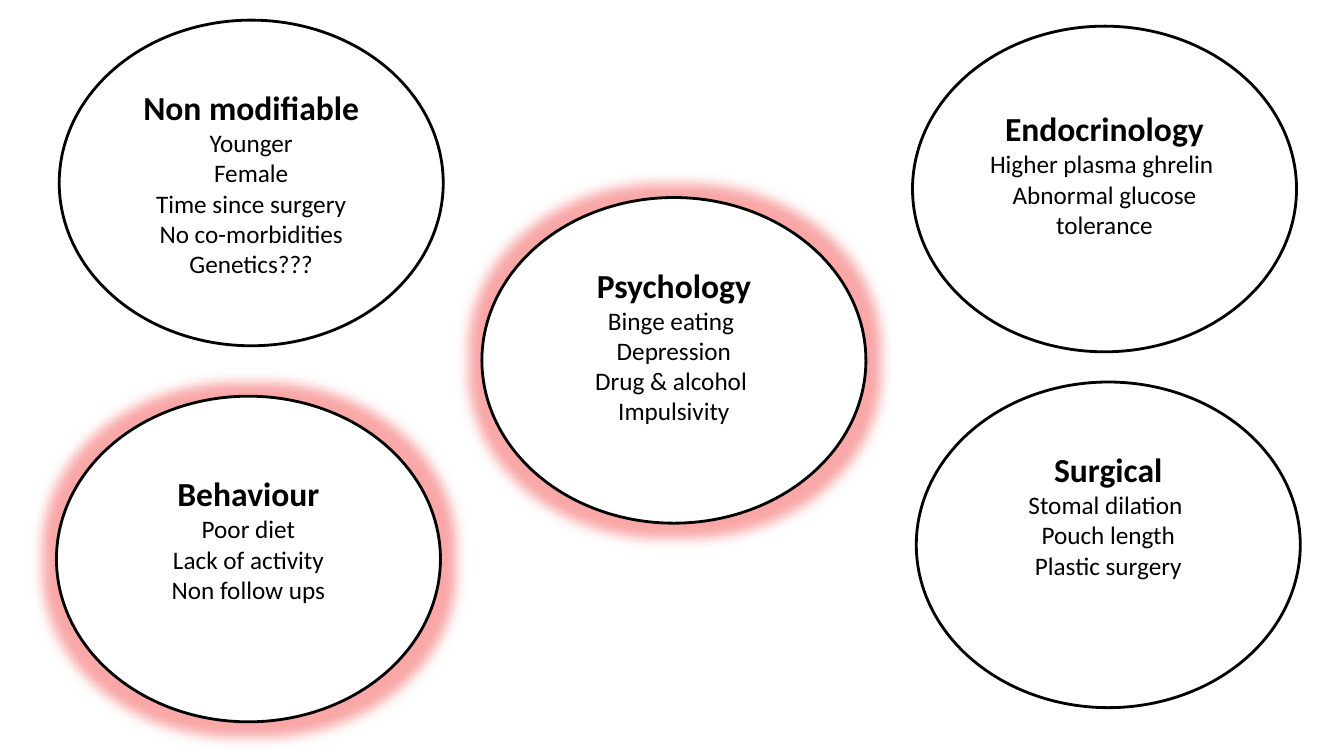
from dataclasses import dataclass

from lxml.etree import SubElement
from pptx import Presentation
from pptx.dml.color import RGBColor
from pptx.enum.shapes import MSO_SHAPE
from pptx.enum.text import MSO_ANCHOR, PP_ALIGN
from pptx.oxml.ns import qn
from pptx.shapes.autoshape import Shape
from pptx.slide import Slide
from pptx.text.text import TextFrame
from pptx.util import Pt

BLACK = RGBColor(0, 0, 0)
WHITE = RGBColor(255, 255, 255)
RED = RGBColor(0xF0, 0x24, 0x24)

FONT = "Calibri"
WIDTH, HEIGHT = 274.3, 232.6
HEAD, BODY = 24, 18
PAD = 3.6
LEAD = 1.2  # line height relative to font size


@dataclass
class Factor:
    left: float
    top: float
    head: str
    items: list[str]
    lift: float = 0  # free height below the text
    glow: bool = False


FACTORS = [
    Factor(40.3, 283, "Behaviour",
           ["Poor diet", " Lack of activity ", "Non follow ups"],
           lift=HEAD * LEAD, glow=True),
    Factor(651.8, 18.7, "Endocrinology",
           ["Higher plasma ghrelin  Abnormal glucose tolerance"],
           lift=BODY * LEAD),
    Factor(42.3, 14.4, "Non modifiable",
           ["Younger", "Female", "Time since surgery",
            "No co-morbidities", "Genetics???"]),
    Factor(654.5, 272.9, "Surgical",
           ["Stomal dilation ", "Pouch length", "Plastic surgery"],
           lift=2 * BODY * LEAD),
    Factor(344.2, 141.1, "Psychology",
           ["Binge eating ", " Depression ", "Drug & alcohol ", "Impulsivity"],
           lift=BODY * LEAD, glow=True),
]


def add_text(frame: TextFrame, text: str, *, size: float = BODY,
             bold: bool = False, first: bool = False) -> None:
    para = frame.paragraphs[0] if first else frame.add_paragraph()
    para.alignment = PP_ALIGN.CENTER
    run = para.add_run()
    run.text = text
    font = run.font
    font.name, font.size, font.bold = FONT, Pt(size), bold
    font.color.rgb = BLACK


def add_glow(shape: Shape, color: RGBColor, size: float, alpha: int) -> None:
    effects = shape._element.spPr.find(qn("a:effectLst"))
    glow = SubElement(effects, qn("a:glow"), rad=str(Pt(size)))
    tint = SubElement(glow, qn("a:srgbClr"), val=str(color))
    SubElement(tint, qn("a:alpha"), val=str(alpha * 1000))


def add_factor(slide: Slide, factor: Factor) -> None:
    # Oval
    oval = slide.shapes.add_shape(
        MSO_SHAPE.OVAL, Pt(factor.left), Pt(factor.top), Pt(WIDTH), Pt(HEIGHT))
    oval.shadow.inherit = False
    oval.fill.solid()
    oval.fill.fore_color.rgb = WHITE
    oval.line.color.rgb = BLACK
    oval.line.width = Pt(2)
    if factor.glow:
        add_glow(oval, RED, size=18, alpha=40)

    # Heading and items
    frame = oval.text_frame
    frame.word_wrap = True
    frame.vertical_anchor = MSO_ANCHOR.MIDDLE
    frame.margin_top = Pt(PAD)
    frame.margin_bottom = Pt(PAD + factor.lift)
    add_text(frame, factor.head, size=HEAD, bold=True, first=True)
    for item in factor.items:
        add_text(frame, item)


def main() -> None:
    deck = Presentation()
    deck.slide_width, deck.slide_height = Pt(960), Pt(540)
    slide = deck.slides.add_slide(deck.slide_layouts.get_by_name("Blank"))
    for factor in FACTORS:
        add_factor(slide, factor)
    deck.save("out.pptx")


if __name__ == "__main__":
    main()
